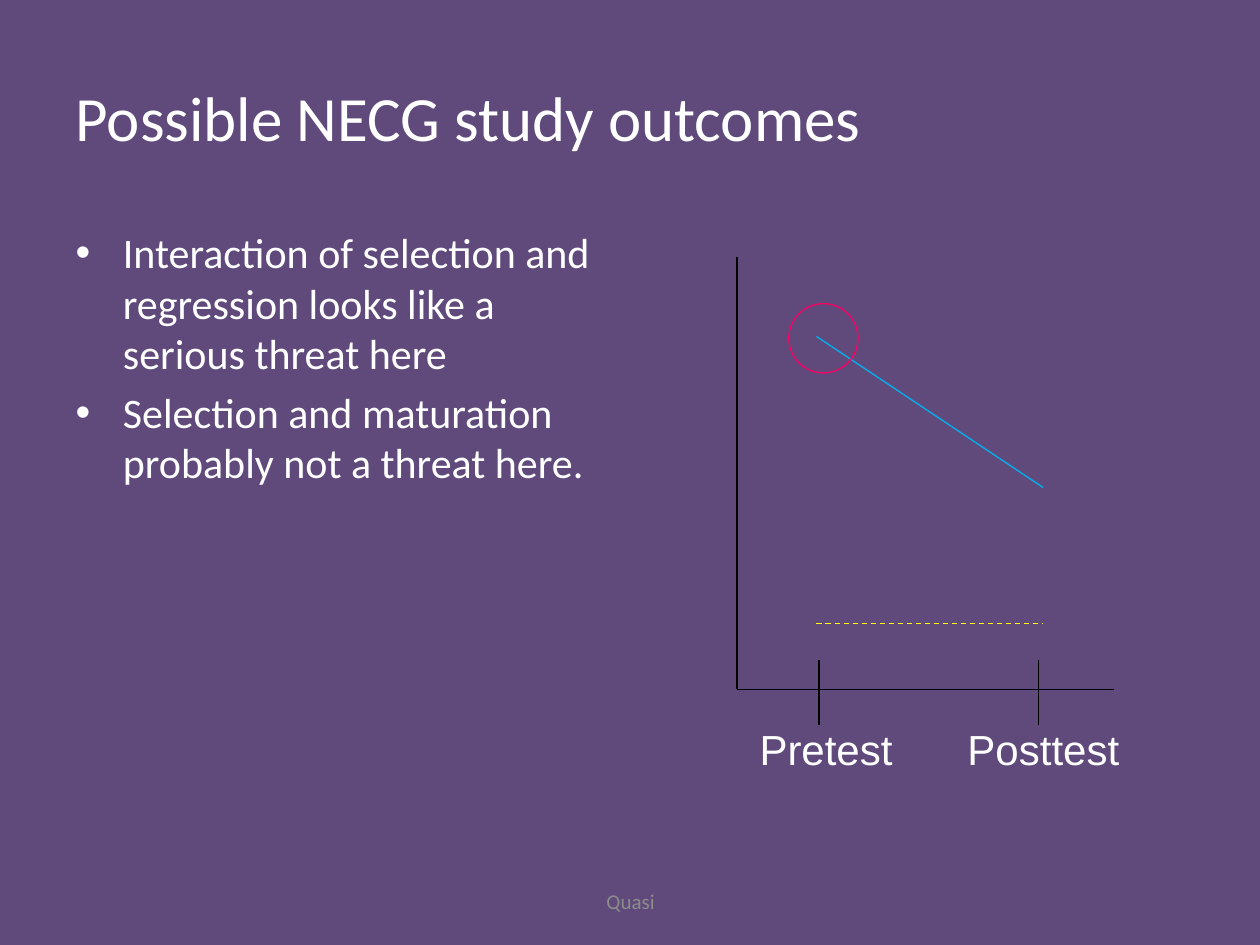
"""Build a slide on possible NECG study outcomes with a pretest-posttest line diagram."""
from typing import NamedTuple, Optional

from lxml.etree import SubElement
from pptx import Presentation
from pptx.dml.color import RGBColor
from pptx.enum.dml import MSO_LINE_DASH_STYLE as Dash
from pptx.enum.shapes import MSO_CONNECTOR as Connector, MSO_SHAPE as Shape
from pptx.enum.text import MSO_ANCHOR as Anchor, MSO_AUTO_SIZE as AutoSize, PP_ALIGN as Align
from pptx.oxml.ns import qn
from pptx.util import Inches, Pt

COLUMNS, ROWS = 100, 75
WIDTH, HEIGHT = Inches(10), Inches(7.5)
COLORS = {
    "background": "604A7B",
    "text": "FFFFFF",
    "footer": "8C8C8C",
    "axis": "000000",
    "control": "FFFF00",
    "treatment": "00B0F0",
    "highlight": "FF0066",
}
BULLETS = (
    "Interaction of selection and regression looks like a serious threat here",
    "Selection and maturation probably not a threat here.",
)


class Area(NamedTuple):
    column: float
    row: float
    columns: float
    rows: float


class Segment(NamedTuple):
    start: tuple[float, float]
    end: tuple[float, float]
    color: str
    dash: Optional[Dash] = None


class Label(NamedTuple):
    text: str
    area: Area
    size: float
    font: str
    color: str = "text"
    align: Align = Align.LEFT
    anchor: Anchor = Anchor.TOP
    wrap: bool = True


AXIS_LEFT, AXIS_BOTTOM = 58.5, 54.7
PRETEST, POSTTEST = 65, 82.4
LINE_START, LINE_END = 64.8, 82.8
SEGMENTS = (
    Segment((AXIS_LEFT, 20.4), (AXIS_LEFT, AXIS_BOTTOM), "axis"),
    Segment((88.4, AXIS_BOTTOM), (AXIS_LEFT, AXIS_BOTTOM), "axis"),
    *(Segment((tick, 52.4), (tick, 57.5), "axis") for tick in (PRETEST, POSTTEST)),
    Segment((LINE_START, 49.5), (LINE_END, 49.5), "control", Dash.DASH),
    Segment((LINE_START, 26.7), (LINE_END, 38.7), "treatment"),
)
LABELS = (
    Label("Quasi", Area(34.2, 69.5, 31.7, 4), 12, "Calibri", "footer", Align.CENTER, Anchor.MIDDLE),
    Label("Pretest", Area(59.3, 56.9, 13.3, 5), 24, "Arial", wrap=False),
    Label("Posttest", Area(75.8, 56.9, 17.5, 5), 24, "Arial", wrap=False),
)


def x(column: float) -> int:
    """Turn grid columns into a length."""
    return round(WIDTH * column / COLUMNS)


def y(row: float) -> int:
    """Turn grid rows into a length."""
    return round(HEIGHT * row / ROWS)


def bounds(area: Area) -> tuple[int, int, int, int]:
    """Turn a grid area into left, top, width and height."""
    return x(area.column), y(area.row), x(area.columns), y(area.rows)


def rgb(name: str) -> RGBColor:
    """Look up a named colour."""
    return RGBColor.from_string(COLORS[name])


def set_font(paragraph, size: float, font: str, color: str) -> None:
    """Set the font of a whole paragraph."""
    paragraph.font.size = Pt(size)
    paragraph.font.name = font
    paragraph.font.color.rgb = rgb(color)


def fill_placeholder(holder, area: Area, lines: tuple[str, ...], size: float) -> None:
    """Move a placeholder and fill it with left-aligned paragraphs."""
    holder.left, holder.top, holder.width, holder.height = bounds(area)
    frame = holder.text_frame
    frame.text = "\n".join(lines)
    frame.auto_size = AutoSize.NONE
    for paragraph in frame.paragraphs:
        paragraph.alignment = Align.LEFT
        set_font(paragraph, size, "Calibri", "text")


def draw_segment(page, segment: Segment) -> None:
    """Draw one thin straight line."""
    connector = page.shapes.add_connector(
        Connector.STRAIGHT,
        x(segment.start[0]), y(segment.start[1]), x(segment.end[0]), y(segment.end[1]),
    )
    connector.line.color.rgb = rgb(segment.color)
    connector.line.width = Pt(0.75)
    if segment.dash is not None:
        connector.line.dash_style = segment.dash
    SubElement(connector._element.spPr, qn("a:effectLst"))


def draw_label(page, label: Label) -> None:
    """Draw one text box."""
    frame = page.shapes.add_textbox(*bounds(label.area)).text_frame
    frame.word_wrap = label.wrap
    frame.vertical_anchor = label.anchor
    paragraph = frame.paragraphs[0]
    paragraph.text = label.text
    paragraph.alignment = label.align
    set_font(paragraph, label.size, label.font, label.color)


def draw_circle(page, area: Area, color: str) -> None:
    """Draw an unfilled circle."""
    circle = page.shapes.add_shape(Shape.OVAL, *bounds(area))
    circle.shadow.inherit = False
    circle.fill.background()
    circle.line.color.rgb = rgb(color)
    circle.line.width = Pt(0.75)


def main() -> None:
    """Build and save the deck."""
    deck = Presentation()
    deck.slide_width, deck.slide_height = WIDTH, HEIGHT
    page = deck.slides.add_slide(deck.slide_layouts[1])
    page.background.fill.solid()
    page.background.fill.fore_color.rgb = rgb("background")

    fill_placeholder(page.shapes.title, Area(5, 3, 90, 12.5), ("Possible NECG study outcomes",), 36)
    fill_placeholder(page.placeholders[1], Area(5, 17.5, 44.2, 49.5), BULLETS, 24)
    for segment in SEGMENTS:
        draw_segment(page, segment)
    for label in LABELS:
        draw_label(page, label)
    draw_circle(page, Area(62.6, 24.1, 5.5, 5.5), "highlight")
    deck.save("out.pptx")


if __name__ == "__main__":
    main()
